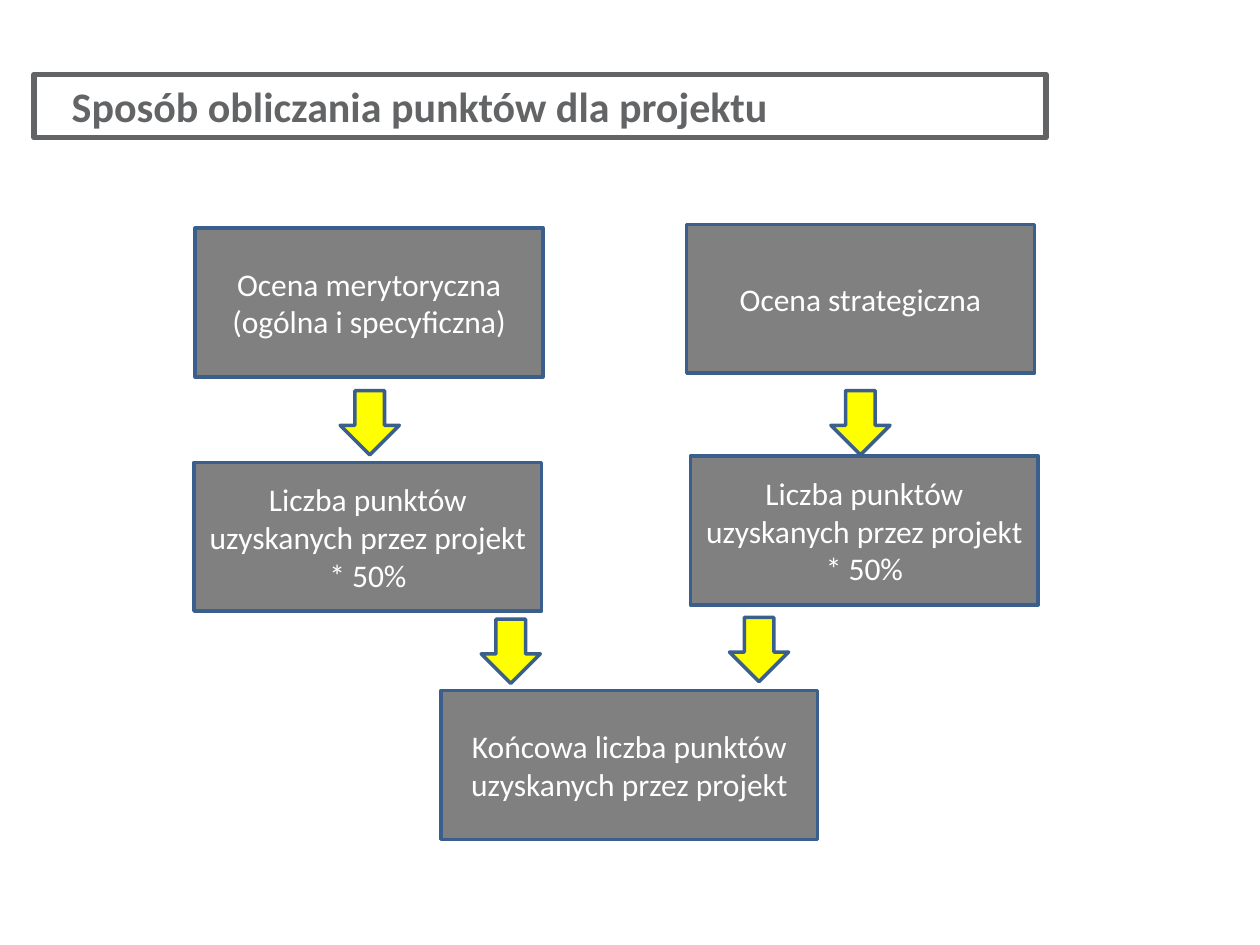
from dataclasses import dataclass

from pptx import Presentation
from pptx.dml.color import RGBColor
from pptx.enum import shapes, text
from pptx.util import Pt


@dataclass(frozen=True)
class Theme:
    font: str = "Calibri"
    title_size: int = 24
    body_size: int = 18
    title: str = "636466"
    box: str = "808080"
    outline: str = "3A5F8C"
    arrow: str = "FFFF00"
    label: str = "FFFFFF"


THEME = Theme()
BOX_W, BOX_H = 198.7, 85
RESULT_W = 215.3
ARROW_W, ARROW_H = 33.8, 36.7
SCORE = "Liczba punktów uzyskanych przez projekt * 50%"

BOXES = [
    (0.7, 2.1, BOX_W, "Ocena merytoryczna (ogólna i specyficzna)"),
    (281.5, 0, BOX_W, "Ocena strategiczna"),
    (0, 136, BOX_W, SCORE),
    (283.7, 132.4, BOX_W, SCORE),
    (141.1, 266.4, RESULT_W, "Końcowa liczba punktów uzyskanych przez projekt"),
]
ARROWS = [(83.5, 95), (363.9, 95), (164.1, 225.6), (306, 224.6)]


def add_shape(slide, kind, box, fill, line, weight):
    s = slide.shapes.add_shape(kind, *(Pt(v) for v in box))
    s.shadow.inherit = False
    if fill:
        s.fill.solid()
        s.fill.fore_color.rgb = RGBColor.from_string(fill)
    else:
        s.fill.background()
    s.line.color.rgb = RGBColor.from_string(line)
    s.line.width = Pt(weight)
    return s


def set_label(s, label, size, color, align, bold=False):
    tf = s.text_frame
    tf.word_wrap = True
    tf.text = label
    p = tf.paragraphs[0]
    p.alignment = align
    f = p.runs[0].font
    f.name, f.size, f.bold = THEME.font, Pt(size), bold
    f.color.rgb = RGBColor.from_string(color)
    return p


def add_title(slide, box):
    s = add_shape(slide, shapes.MSO_SHAPE.RECTANGLE, box, None, THEME.title, 3)
    s.text_frame.vertical_anchor = text.MSO_ANCHOR.TOP
    p = set_label(s, "Sposób obliczania punktów dla projektu", THEME.title_size,
                  THEME.title, text.PP_ALIGN.JUSTIFY, bold=True)
    p.space_after = Pt(6)
    p._p.get_or_add_pPr().set("marL", str(Pt(14.4)))


def add_flow(slide, left, top):
    for x, y, w, label in BOXES:
        s = add_shape(slide, shapes.MSO_SHAPE.RECTANGLE,
                      (left + x, top + y, w, BOX_H), THEME.box, THEME.outline, 2)
        s.text_frame.vertical_anchor = text.MSO_ANCHOR.MIDDLE
        set_label(s, label, THEME.body_size, THEME.label, text.PP_ALIGN.CENTER)
    for x, y in ARROWS:
        add_shape(slide, shapes.MSO_SHAPE.DOWN_ARROW,
                  (left + x, top + y, ARROW_W, ARROW_H), THEME.arrow, THEME.outline, 2)


def main():
    prs = Presentation()
    prs.slide_width, prs.slide_height = Pt(720), Pt(540)
    slide = prs.slides.add_slide(prs.slide_layouts[6])
    add_title(slide, (19.5, 42.5, 578.2, 36.3))
    add_flow(slide, 110.9, 128.2)
    prs.save("out.pptx")


if __name__ == "__main__":
    main()
